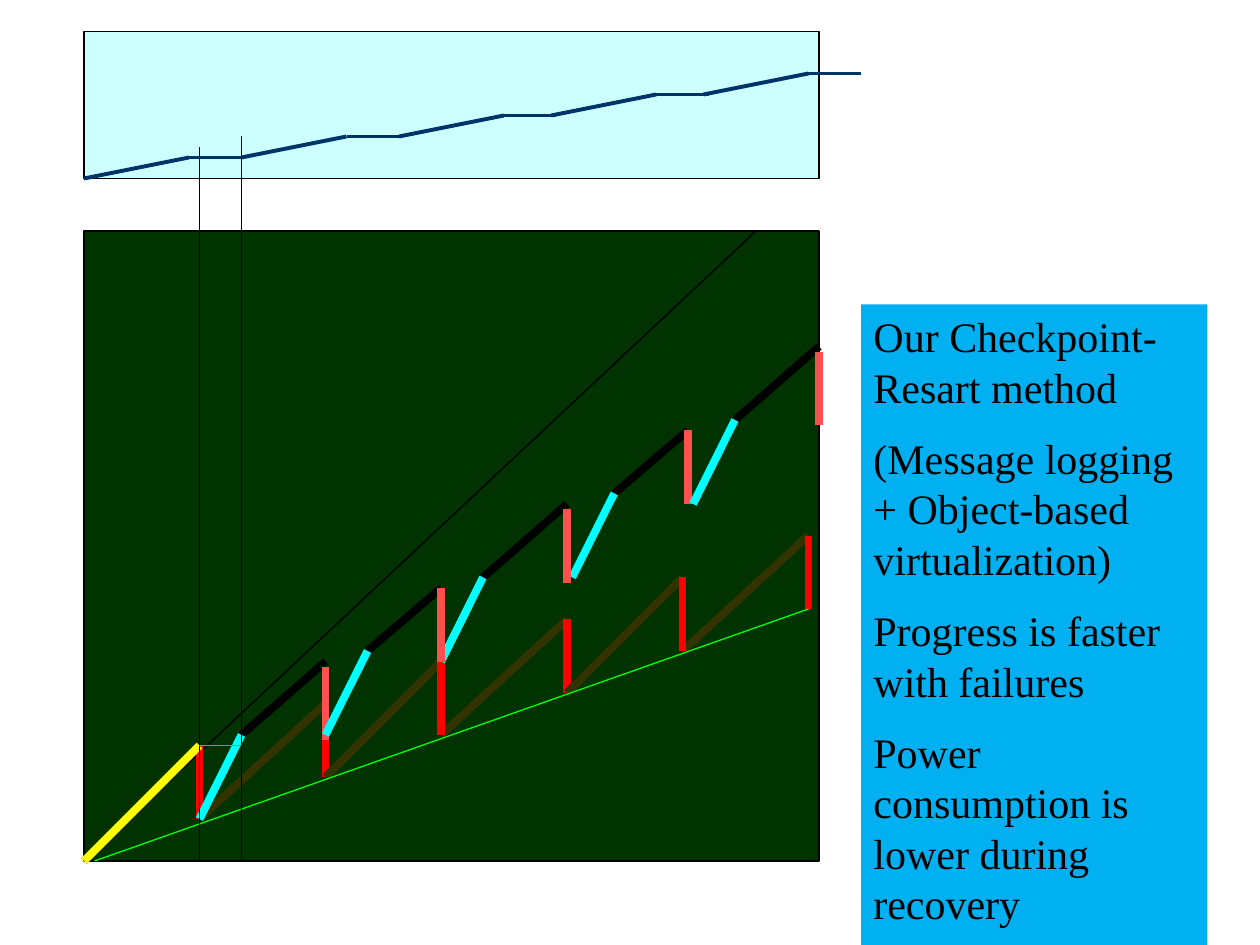
from lxml import etree
from pptx import Presentation
from pptx.dml.color import RGBColor
from pptx.enum.shapes import MSO_CONNECTOR, MSO_SHAPE
from pptx.oxml.ns import qn
from pptx.util import Cm, Pt

STRAIGHT = MSO_CONNECTOR.STRAIGHT
RECTANGLE = MSO_SHAPE.RECTANGLE

COLORS = {
    "plot": "003300", "progress_plot": "CCFFFF", "note": "00B0F0",
    "black": "000000", "work": "333300", "failure": "FF0000",
    "baseline": "00FF00", "first_work": "FFFF00", "our_failure": "FF5050",
    "recovery": "00FFFF", "progress": "003366", "level": "00C896",
}
THIN, MEDIUM, THICK = 0.75, 2.25, 4.5

# All positions are counted in grid steps, 24 to the inch.
GRID = 2.54 / 24
SLIDE_SIZE = (240, 180)
PLOT = (16, 44, 140, 120)
PROGRESS_PLOT = (16, 6, 140, 28)
NOTE = (164, 58, 66, 122)
ORIGIN = (16, 164)

NOTE_PARAGRAPHS = [
    "Our Checkpoint-Resart method",
    "(Message logging + Object-based virtualization)",
    "Progress is faster with failures",
    "Power consumption is lower during recovery",
]
NOTE_FONT = {"name": "Times New Roman", "size": Pt(24)}

# Conventional method: work climbs to each peak, then a failure drops it.
PEAK_COLUMNS = [38, 62, 84, 108, 130, 154]
FIRST_PEAK, PEAK_STEP, DROP = 142, 8, 14

# Our method: recovery start, work peak, top of the failure drop.
OUR_CYCLES = [
    ((109, 110), (131, 82), 82),
    ((38, 156), (62, 126), 127),
    ((84, 126), (108, 96), 97),
    ((62, 140), (84, 112), 112),
    ((132, 96), (156, 66), 67),
]
RECOVERY_WIDTH, RECOVERY_RISE = 8, 16

# Progress curve: each climb is followed by a flat stretch.
CLIMB_COLUMNS = [16, 46, 76, 105, 134]
CLIMB_BOTTOM, CLIMB_WIDTH, CLIMB_RISE, FLAT_WIDTH = 34, 20, 4, 10


def steps(count):
    return Cm(count * GRID)


def add_line(slide, start, end, color, width):
    connector = slide.shapes.add_connector(
        STRAIGHT, *(steps(value) for value in (*start, *end)))
    connector.line.color.rgb = RGBColor.from_string(COLORS[color])
    connector.line.width = Pt(width)
    etree.SubElement(connector._element.spPr, qn("a:effectLst"))


def add_panel(slide, box, color):
    panel = slide.shapes.add_shape(RECTANGLE, *map(steps, box))
    panel.shadow.inherit = False
    panel.fill.solid()
    panel.fill.fore_color.rgb = RGBColor.from_string(COLORS[color])
    panel.line.color.rgb = RGBColor.from_string(COLORS["black"])
    panel.line.width = Pt(THIN)


def add_conventional_method(slide):
    peaks = [(x, FIRST_PEAK - PEAK_STEP * index)
             for index, x in enumerate(PEAK_COLUMNS)]
    bottoms = [(x, y + DROP) for x, y in peaks]
    cycles = list(zip([ORIGIN] + bottoms, peaks, bottoms))
    for first in range(0, len(cycles), 2):
        pair = cycles[first:first + 2]
        for start, peak, _ in pair:
            add_line(slide, start, peak, "work", THICK)
        for _, peak, bottom in pair:
            add_line(slide, bottom, peak, "failure", THICK)


def add_our_method(slide):
    for start, peak, drop_top in OUR_CYCLES:
        recovered = (start[0] + RECOVERY_WIDTH, start[1] - RECOVERY_RISE)
        column = peak[0]
        add_line(slide, recovered, peak, "black", THICK)
        add_line(slide, (column, drop_top + DROP), (column, drop_top),
                 "our_failure", THICK)
        add_line(slide, start, recovered, "recovery", THICK)


def add_progress_curve(slide):
    for index, x in enumerate(CLIMB_COLUMNS):
        bottom = CLIMB_BOTTOM - CLIMB_RISE * index
        top = (x + CLIMB_WIDTH, bottom - CLIMB_RISE)
        add_line(slide, (x, bottom), top, "progress", MEDIUM)
        add_line(slide, top, (top[0] + FLAT_WIDTH, top[1]), "progress", MEDIUM)


def add_note(slide):
    note = slide.shapes.add_textbox(*map(steps, NOTE))
    note.fill.solid()
    note.fill.fore_color.rgb = RGBColor.from_string(COLORS["note"])
    frame = note.text_frame
    frame.word_wrap = True
    for index, text in enumerate(NOTE_PARAGRAPHS):
        paragraph = frame.add_paragraph() if index else frame.paragraphs[0]
        paragraph.space_before = Pt(12 if index else 0)
        paragraph.line_spacing = Pt(28.8)
        run = paragraph.add_run()
        run.text = text
        for name, value in NOTE_FONT.items():
            setattr(run.font, name, value)
        run.font.color.rgb = RGBColor.from_string(COLORS["black"])


def main():
    presentation = Presentation()
    presentation.slide_width, presentation.slide_height = map(steps, SLIDE_SIZE)
    slide = presentation.slides.add_slide(presentation.slide_layouts[6])

    add_panel(slide, PLOT, "plot")
    add_line(slide, ORIGIN, (144, 44), "black", THIN)
    add_conventional_method(slide)
    add_line(slide, (18, 164), (154, 116), "baseline", THIN)
    add_panel(slide, PROGRESS_PLOT, "progress_plot")
    add_line(slide, ORIGIN, (38, 142), "first_work", THICK)
    add_our_method(slide)
    for x, top in [(38, 28), (46, 26)]:
        add_line(slide, (x, 164), (x, top), "black", THIN)
    add_progress_curve(slide)
    add_note(slide)
    add_line(slide, (38, 142), (46, 142), "level", THIN)

    presentation.save("out.pptx")


if __name__ == "__main__":
    main()
